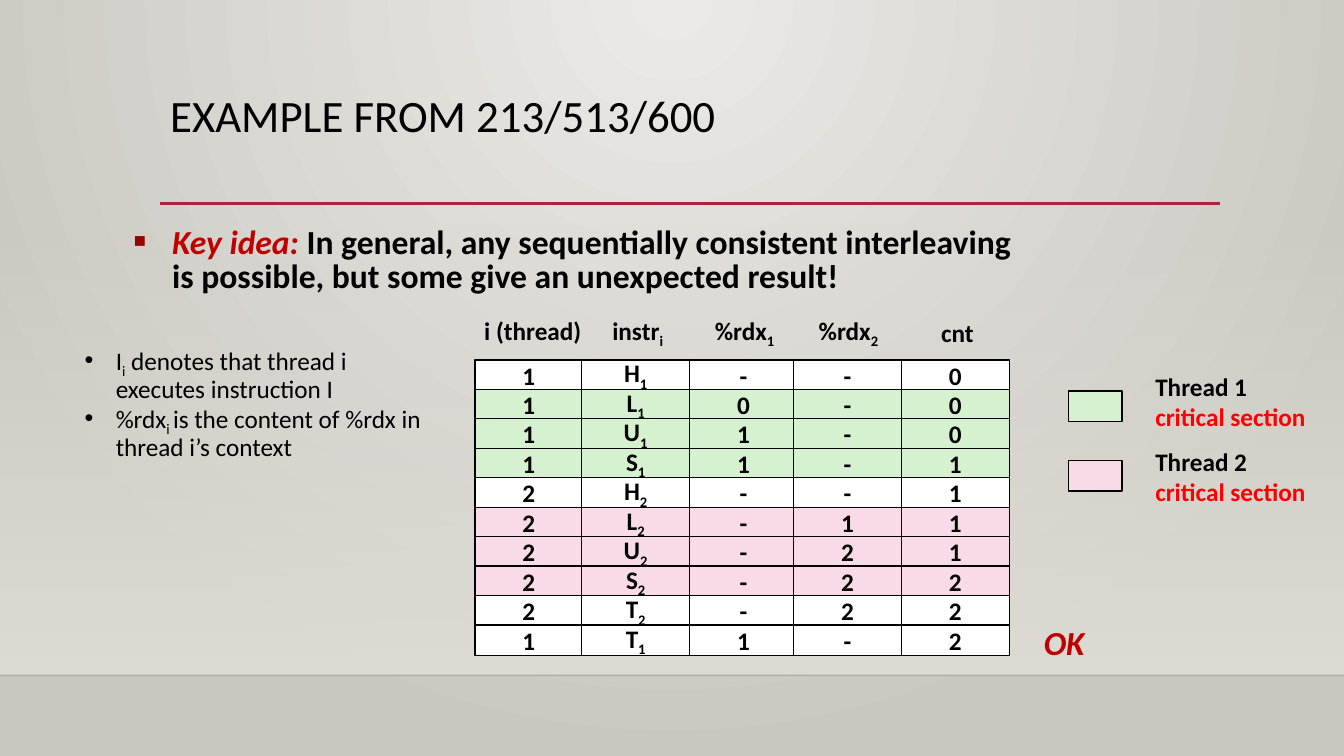
"""Build the slide on interleaved threads and their critical sections."""
from dataclasses import dataclass
from typing import Any, Optional

from lxml.etree import SubElement
from pptx import Presentation
from pptx.dml.color import RGBColor
from pptx.enum.shapes import MSO_CONNECTOR, MSO_SHAPE
from pptx.enum.text import MSO_ANCHOR, PP_ALIGN
from pptx.oxml import parse_xml
from pptx.oxml.ns import nsdecls, qn
from pptx.util import Inches, Pt


@dataclass(frozen=True)
class Theme:
    font: str = "Calibri"
    ink: str = "000000"
    red: str = "C00000"
    alert: str = "FF0000"
    rule: str = "B71E42"
    edge: str = "000001"
    mark: str = "990000"
    white: str = "FFFFFF"
    green: str = "D5F1CF"
    pink: str = "F8DAE8"
    light: str = "ECEAE7"
    dark: str = "CAC7C1"
    floor: str = "DFDBD5"
    title: int = 32
    lead: int = 24
    body: int = 18


@dataclass(frozen=True)
class Piece:
    text: str
    color: str = Theme.ink
    size: int = Theme.body
    bold: bool = True
    slant: bool = False
    sub: bool = False


@dataclass(frozen=True)
class Box:
    left: float
    top: float
    width: float
    height: float

    def span(self) -> list[int]:
        return [Inches(n) for n in (self.left, self.top, self.width, self.height)]


@dataclass(frozen=True)
class Bullet:
    char: str
    left: float
    hang: float
    color: str = Theme.ink
    scale: int = 100


@dataclass(frozen=True)
class Column:
    left: float
    head: Box
    name: str
    sub: str
    cells: str


@dataclass(frozen=True)
class Key:
    name: str
    color: str
    top: float
    chip: float


COLUMNS = [
    Column(4.71, Box(4.7, 3.08, 1.17, 0.4), "i (thread)", "", "1 1 1 1 2 2 2 2 2 1"),
    Column(5.77, Box(5.97, 3.1, 0.71, 0.4), "instr", "i", "H1 L1 U1 S1 H2 L2 U2 S2 T2 T1"),
    Column(6.84, Box(6.98, 3.1, 0.81, 0.4), "%rdx", "1", "- 0 1 1 - - - - - 1"),
    Column(7.87, Box(8.01, 3.1, 0.81, 0.4), "%rdx", "2", "- - - - - 1 2 2 2 -"),
    Column(8.94, Box(9.23, 3.1, 0.53, 0.4), "cnt", "", "0 0 0 1 1 1 1 2 2 2"),
]
SHADES = ([Theme.white] + [Theme.green] * 3 + [Theme.white]
          + [Theme.pink] * 3 + [Theme.white] * 2)
KEYS = [Key("Thread 1 ", Theme.green, 3.63, 3.88),
        Key("Thread 2 ", Theme.pink, 4.38, 4.57)]
START, PITCH = 3.57, 0.2925


def tint(code: str) -> RGBColor:
    """Turn a hex code into a colour."""
    return RGBColor.from_string(code)


def write(para: Any, parts: list[Piece], space: float = 1.0,
          dot: Optional[Bullet] = None) -> None:
    """Fill a paragraph with styled pieces."""
    if dot:
        props = para._p.get_or_add_pPr()
        props.set("marL", str(Inches(dot.left)))
        props.set("indent", str(-Inches(dot.hang)))
        shade = SubElement(props, qn("a:buClr"))
        SubElement(shade, qn("a:srgbClr")).set("val", dot.color)
        SubElement(props, qn("a:buSzPct")).set("val", str(dot.scale * 1000))
        SubElement(props, qn("a:buFont")).set("typeface", "Arial")
        SubElement(props, qn("a:buChar")).set("char", dot.char)
    para.line_spacing = space
    para.text = parts[0].text
    for part in parts[1:]:
        para.add_run().text = part.text
    for run, part in zip(para.runs, parts):
        font = run.font
        font.name, font.size = Theme.font, Pt(part.size)
        font.bold, font.italic = part.bold, part.slant
        font.color.rgb = tint(part.color)
        if part.sub:
            run._r.get_or_add_rPr().set("baseline", "-25000")


def label(slide: Any, box: Box, lines: list[list[Piece]], space: float = 1.0,
          dot: Optional[Bullet] = None) -> None:
    """Place a text box with one paragraph per line."""
    frame = slide.shapes.add_textbox(*box.span()).text_frame
    frame.word_wrap = True
    for spot, parts in enumerate(lines):
        para = frame.add_paragraph() if spot else frame.paragraphs[0]
        write(para, parts, space, dot)


def center(shape: Any, parts: list[Piece]) -> None:
    """Write one unwrapped line in the middle of a shape."""
    frame = shape.text_frame
    frame.word_wrap = False
    frame.vertical_anchor = MSO_ANCHOR.MIDDLE
    write(frame.paragraphs[0], parts)
    frame.paragraphs[0].alignment = PP_ALIGN.CENTER


def index(base: str, sub: str) -> list[Piece]:
    """Pair a symbol with its subscript, if any."""
    return [Piece(base)] + ([Piece(sub, sub=True)] if sub else [])


def panel(slide: Any, box: Box) -> Any:
    """Add a plain rectangle without a shadow."""
    shape = slide.shapes.add_shape(MSO_SHAPE.RECTANGLE, *box.span())
    shape.shadow.inherit = False
    return shape


def tile(slide: Any, box: Box, color: str) -> Any:
    """Add a filled rectangle with a thin outline."""
    shape = panel(slide, box)
    shape.fill.solid()
    shape.fill.fore_color.rgb = tint(color)
    shape.line.color.rgb, shape.line.width = tint(Theme.ink), Pt(1)
    return shape


def line(slide: Any, left: float, right: float, top: float, color: str,
         width: float, alpha: int = 100) -> None:
    """Draw a level rule."""
    rule = slide.shapes.add_connector(
        MSO_CONNECTOR.STRAIGHT, Inches(left), Inches(top), Inches(right), Inches(top))
    rule.line.color.rgb, rule.line.width = tint(color), Pt(width)
    props = rule._element.spPr
    SubElement(props, qn("a:effectLst"))
    shade = props.find(".//" + qn("a:srgbClr"))
    SubElement(shade, qn("a:alpha")).set("val", str(alpha * 1000))


def blend(fill: Any, start: str, end: str) -> None:
    """Set a two-stop gradient."""
    fill.gradient()
    for stop, code, place in zip(fill.gradient_stops, (start, end), (0, 1)):
        stop.color.rgb, stop.position = tint(code), place


def scene(slide: Any) -> None:
    """Paint the backdrop, floor and rules."""
    blend(slide.background.fill, Theme.light, Theme.dark)
    grad = slide._element.find(".//" + qn("a:gradFill"))
    glow = parse_xml(f'<a:path {nsdecls("a")} path="circle">'
                     '<a:fillToRect l="43000" t="0" r="43000" b="100000"/></a:path>')
    grad.replace(grad.find(qn("a:lin")), glow)
    floor = panel(slide, Box(0, 2.21, 13.33, 4.49))
    blend(floor.fill, Theme.floor, Theme.floor)
    floor.fill.gradient_angle = 270
    floor.line.fill.background()
    shade = floor._element.spPr.find(".//" + qn("a:srgbClr"))
    SubElement(shade, qn("a:alpha")).set("val", "0")
    line(slide, 0, 13.33, 6.7, Theme.edge, 1, 20)
    line(slide, 1.59, 12.1, 2.02, Theme.rule, 2.5)


def trace(slide: Any, col: Column) -> None:
    """Draw one column of the trace under its heading."""
    for row, (text, color) in enumerate(zip(col.cells.split(), SHADES)):
        box = Box(col.left, START + row * PITCH, 1.07, 0.3)
        center(tile(slide, box, color), index(text[0], text[1:]))
    center(slide.shapes.add_textbox(*col.head.span()), index(col.name, col.sub))


def legend(slide: Any, key: Key) -> None:
    """Draw a colour swatch and its label."""
    tile(slide, Box(10.6, key.chip, 0.53, 0.3), key.color)
    label(slide, Box(11.36, key.top, 1.75, 0.71),
          [[Piece(key.name), Piece("critical section", Theme.alert)]])


def main() -> None:
    """Build and save the slide."""
    deck = Presentation()
    deck.slide_width, deck.slide_height = Inches(13.33), Inches(7.5)
    slide = deck.slides.add_slide(deck.slide_layouts[6])
    scene(slide)
    label(slide, Box(1.59, 0.88, 10.5, 1.15),
          [[Piece("EXAMPLE FROM 213/513/600", size=Theme.title, bold=False)]], 0.9)
    label(slide, Box(1.23, 2.2, 9.09, 1.59),
          [[Piece("Key idea: ", Theme.red, Theme.lead, slant=True),
            Piece("In general, any sequentially consistent interleaving is possible, "
                  "but some give an unexpected result!", size=Theme.lead)]],
          0.85, Bullet("■", 0.38, 0.38, Theme.mark, 60))
    for col in COLUMNS:
        trace(slide, col)
    center(slide.shapes.add_textbox(*Box(10.25, 6.12, 0.61, 0.5).span()),
           [Piece("OK", Theme.red, Theme.lead, slant=True)])
    for key in KEYS:
        legend(slide, key)
    label(slide, Box(0.24, 3.38, 4.24, 1.19),
          [[Piece("I", bold=False), Piece("i", bold=False, sub=True),
            Piece(" denotes that thread i executes instruction I", bold=False)],
           [Piece("%rdx", bold=False), Piece("i ", bold=False, sub=True),
            Piece("is the content of %rdx in thread i’s context", bold=False)]],
          0.9, Bullet("•", 0.81, 0.31))
    deck.save("out.pptx")


if __name__ == "__main__":
    main()
